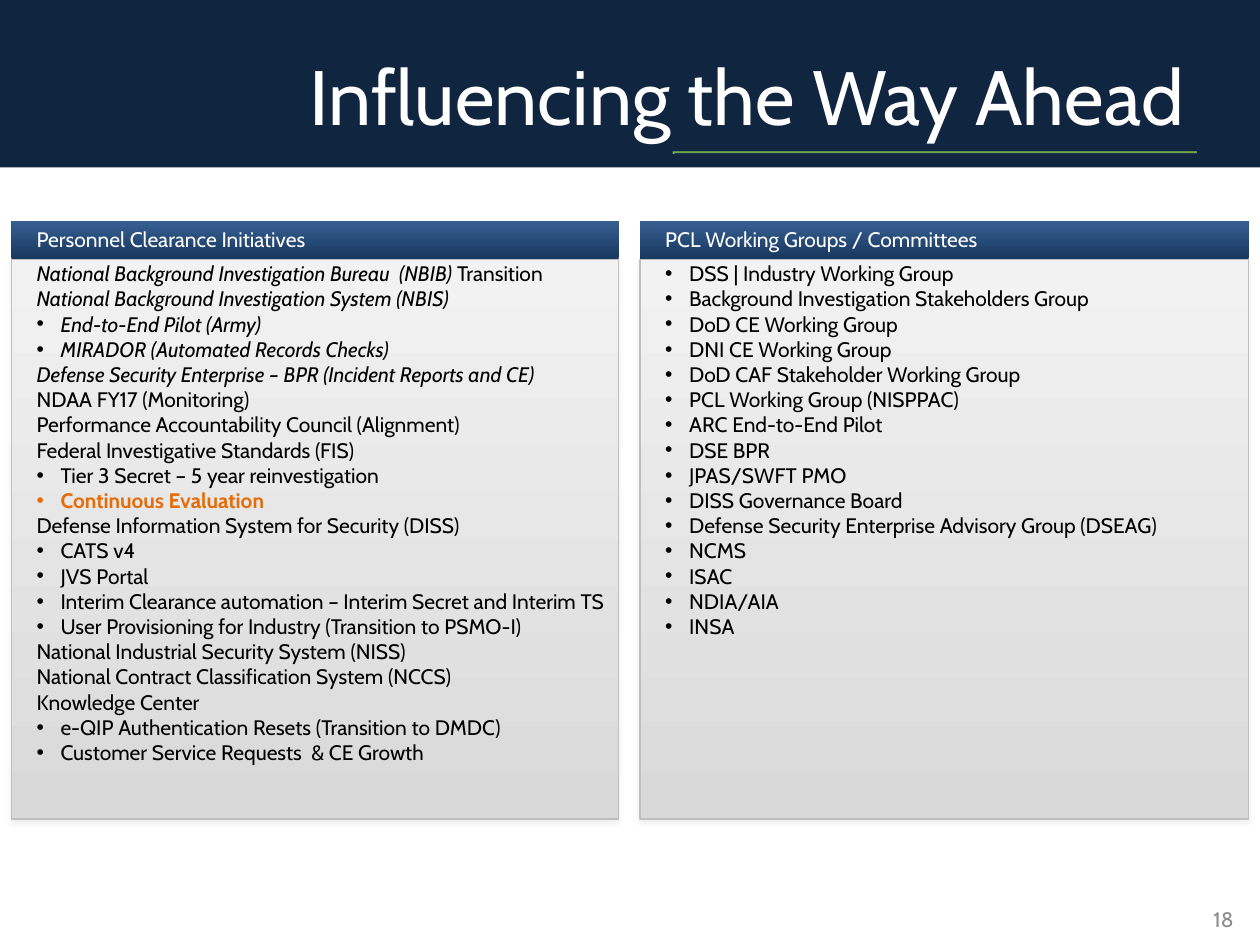
from lxml import etree
from pptx import Presentation
from pptx.dml.color import RGBColor
from pptx.enum.shapes import MSO_SHAPE as SHAPE
from pptx.enum.text import MSO_ANCHOR as ANCHOR, PP_ALIGN as ALIGN
from pptx.oxml import parse_xml
from pptx.oxml.ns import nsdecls, qn
from pptx.util import Inches, Pt

FONT = "Cabin"
NAVY, GREEN, WHITE, BLACK = "10253F", "92D050", "FFFFFF", "000000"
ORANGE, GREY, BORDER, SHADOW = "E46C0A", "8C8C8C", "BFBFBF", "808080"
HEAD_STOPS = [(0, "17375E"), (100, "376092")]
BODY_STOPS = [(0, "F2F2F2"), (100, "D9D9D9")]
RULE_STOPS = [(0, NAVY), (50, GREEN), (100, NAVY)]
UP = '<a:lin ang="16200000" scaled="0"/>'
DOWN = '<a:lin ang="5400000" scaled="0"/>'
CORNER = '<a:path path="rect"><a:fillToRect l="100000" t="100000"/></a:path>'

TITLE, NUMBER = "Influencing the Way Ahead", "18"
INITIATIVES = [
    ("National Background Investigation Bureau  (NBIB) |Transition", "mixed"),
    ("National Background Investigation System (NBIS)", "italic"),
    ("• End-to-End Pilot (Army)", "italic"),
    ("• MIRADOR (Automated Records Checks)", "italic"),
    ("Defense Security Enterprise – BPR (Incident Reports and CE)", "italic"),
    ("NDAA FY17 (Monitoring)", ""),
    ("Performance Accountability Council (Alignment)", ""),
    ("Federal Investigative Standards (FIS)", ""),
    ("• Tier 3 Secret – 5 year reinvestigation", ""),
    ("• Continuous Evaluation", "strong"),
    ("Defense Information System for Security (DISS)", ""),
    ("• CATS v4", ""),
    ("• JVS Portal", ""),
    ("• Interim Clearance automation – Interim Secret and Interim TS", ""),
    ("• User Provisioning for Industry (Transition to PSMO-I)", ""),
    ("National Industrial Security System (NISS)", ""),
    ("National Contract Classification System (NCCS)", ""),
    ("Knowledge Center", ""),
    ("• e-QIP Authentication Resets (Transition to DMDC)", ""),
    ("• Customer Service Requests  & CE Growth", ""),
]
GROUPS = [
    "DSS | Industry Working Group", "Background Investigation Stakeholders Group",
    "DoD CE Working Group", "DNI CE Working Group",
    "DoD CAF Stakeholder Working Group", "PCL Working Group (NISPPAC)",
    "ARC End-to-End Pilot", "DSE BPR", "JPAS/SWFT PMO", "DISS Governance Board",
    "Defense Security Enterprise Advisory Group (DSEAG)",
    "NCMS", "ISAC", "NDIA/AIA", "INSA",
]
COLUMNS = [
    (0.09, 4.82, "Personnel Clearance Initiatives", INITIATIVES),
    (5.08, 4.83, "PCL Working Groups / Committees", [("• " + g, "") for g in GROUPS]),
]


def rgb(color):
    return RGBColor.from_string(color)


def add_box(s, box, fill=NAVY, shape=SHAPE.RECTANGLE):
    sp = s.shapes.add_shape(shape, *map(Inches, box))
    sp.shadow.inherit = False
    sp.fill.solid()
    sp.fill.fore_color.rgb = rgb(fill)
    sp.line.fill.background()
    return sp


def set_gradient(sp, stops, direction):
    marks = "".join(f'<a:gs pos="{pos * 1000}"><a:srgbClr val="{color}"/></a:gs>'
                    for pos, color in stops)
    grad = parse_xml(f'<a:gradFill {nsdecls("a")} rotWithShape="1">'
                     f'<a:gsLst>{marks}</a:gsLst>{direction}</a:gradFill>')
    props = sp._element.spPr
    props.replace(props.find(qn("a:solidFill")), grad)


def add_shadow(sp):
    effects = sp._element.spPr.find(qn("a:effectLst"))
    effects.append(parse_xml(
        f'<a:outerShdw {nsdecls("a")} blurRad="{Pt(3.1)}" dist="{Pt(1.8)}" dir="5400000">'
        f'<a:srgbClr val="{SHADOW}"><a:alpha val="13000"/></a:srgbClr></a:outerShdw>'))


def set_frame(sp, insets, anchor=ANCHOR.TOP):
    tf = sp.text_frame
    tf.word_wrap = True
    tf.vertical_anchor = anchor
    tf.margin_left, tf.margin_top, tf.margin_right, tf.margin_bottom = map(Inches, insets)
    return tf


def style(p, size, color, align=ALIGN.LEFT):
    p.alignment = align
    p.font.name, p.font.size = FONT, Pt(size)
    p.font.color.rgb = rgb(color)


def add_bullet(p):
    props = p._p.get_or_add_pPr()
    props.set("marL", str(Inches(0.19)))
    props.set("indent", str(-Inches(0.19)))
    etree.SubElement(props, qn("a:buFont")).set("typeface", "Arial")
    etree.SubElement(props, qn("a:buChar")).set("char", "•")


def add_label(s, box, text, size, color, align, insets):
    tf = set_frame(s.shapes.add_textbox(*map(Inches, box)), insets, ANCHOR.MIDDLE)
    tf.text = text
    style(tf.paragraphs[0], size, color, align)


def add_column(s, left, width, heading, items):
    head = add_box(s, (left, 1.75, width, 0.31), shape=SHAPE.ROUND_2_SAME_RECTANGLE)
    head.adjustments[0] = head.adjustments[1] = 0
    set_gradient(head, HEAD_STOPS, UP)
    tf = set_frame(head, (0.2, 0.05, 0.1, 0.05))
    tf.text = heading
    style(tf.paragraphs[0], 12, WHITE)

    body = add_box(s, (left, 2.06, width, 4.44))
    set_gradient(body, BODY_STOPS, DOWN)
    body.line.color.rgb = rgb(BORDER)
    body.line.width = Pt(0.75)
    add_shadow(body)
    tf = set_frame(body, (0.2, 0.01, 0.01, 0.01))
    for i, (text, kind) in enumerate(items):
        p = tf.add_paragraph() if i else tf.paragraphs[0]
        if text.startswith("• "):
            add_bullet(p)
        style(p, 12, ORANGE if kind == "strong" else BLACK)
        p.font.bold = kind == "strong"
        p.font.italic = kind == "italic"
        parts = text.split("|") if kind == "mixed" else [text.removeprefix("• ")]
        for part in parts:
            p.add_run().text = part
        if kind == "mixed":
            p.runs[0].font.italic = True


def main():
    """Build the slide with its banner and two list columns."""
    prs = Presentation()
    prs.slide_width, prs.slide_height = Inches(10), Inches(7.5)
    s = prs.slides.add_slide(prs.slide_layouts[6])
    add_box(s, (0, 0, 10, 1.33))
    set_gradient(add_box(s, (1.17, 1.17, 8.33, 0.05)), RULE_STOPS, CORNER)
    add_label(s, (1.17, 0.25, 8.33, 1), TITLE, 44, WHITE, ALIGN.RIGHT, (0.1, 0.05, 0.1, 0.05))
    add_label(s, (9.5, 7.17, 0.42, 0.25), NUMBER, 12, GREY, ALIGN.CENTER, (0, 0, 0, 0))
    for column in COLUMNS:
        add_column(s, *column)
    prs.save("out.pptx")


if __name__ == "__main__":
    main()
